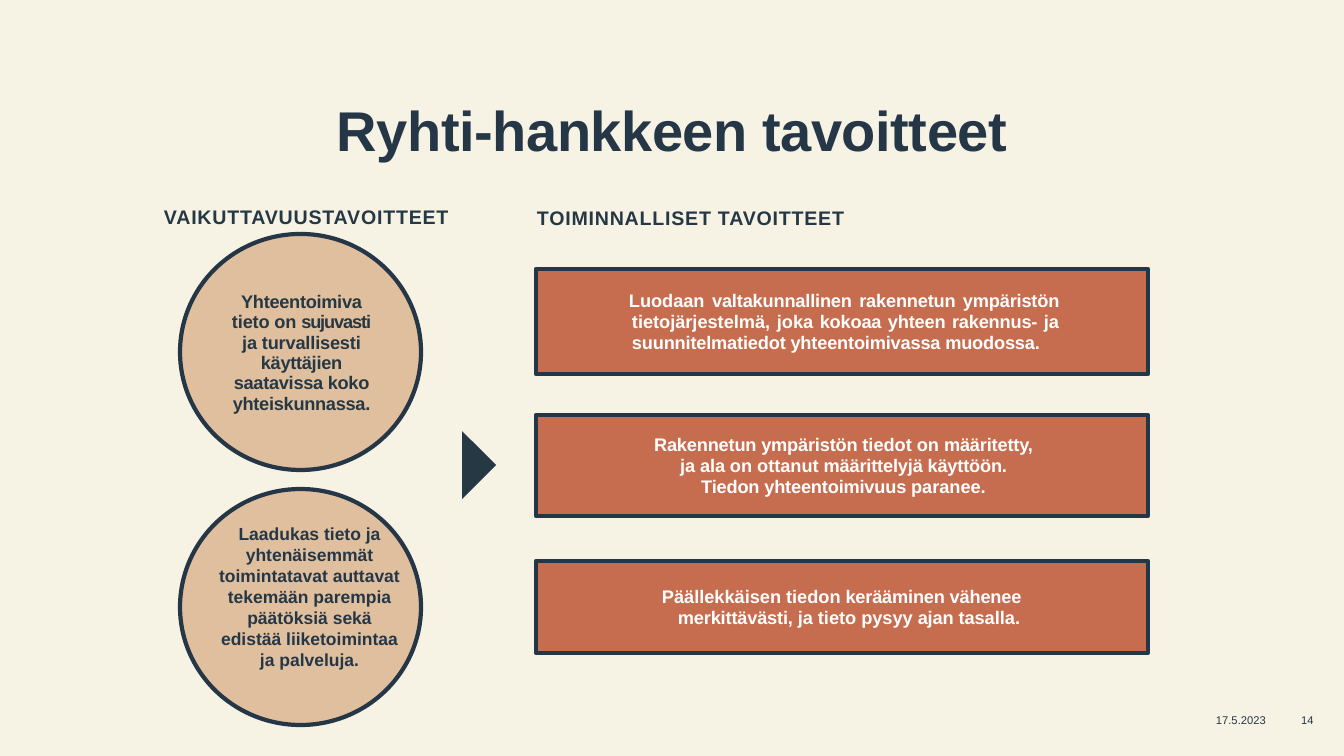
import pptx
import pptx.dml.color
import pptx.enum.shapes
import pptx.enum.text
import pptx.util

RGBColor = pptx.dml.color.RGBColor
ALIGN = pptx.enum.text.PP_ALIGN
ANCHOR = pptx.enum.text.MSO_ANCHOR
SHAPE = pptx.enum.shapes.MSO_SHAPE

CREAM = RGBColor(0xF6, 0xF3, 0xE5)
NAVY = RGBColor(0x25, 0x37, 0x46)
SLATE = RGBColor(0x26, 0x38, 0x44)
SAND = RGBColor(0xE0, 0xBF, 0x9E)
TERRACOTTA = RGBColor(0xC6, 0x6D, 0x4F)
WHITE = RGBColor(0xFF, 0xFF, 0xFF)

SLIDE_WIDTH, SLIDE_HEIGHT = 1344, 756
EMU_PER_PX = 12192000 / SLIDE_WIDTH

# Circles and boxes each stand at an even step
CIRCLE_LEFT, CIRCLE_TOP, CIRCLE_STEP = 180, 234, 255
CIRCLE_WIDTH, CIRCLE_HEIGHT = 241, 236
BOX_LEFT, BOX_TOP, BOX_STEP, BOX_WIDTH = 536, 269, 146, 612

# Each box: height, alignment, (left, first line, right) indents, paragraphs of (text, letter spacing) runs
GOALS = [
    (105, ALIGN.JUSTIFY, (96, -3, 89), [[
        ("Luodaan ", 0),
        ("valtakunnallinen rakennetun ympäristön ", -0.1),
        ("tietojärjestelmä, joka ", 0),
        ("kokoaa yhteen rakennus- ", -0.1),
        ("ja ", 0),
        ("suunnitelmatiedot yhteentoimivassa muodossa.", -0.1)]]),
    (101, ALIGN.CENTER, (3, 0, 0), [
        [("Rakennetun ympäristön ", -0.1), ("tiedot on ", 0),
         ("määritetty,\n", -0.1), ("ja ", 0), ("ala ", -0.1),
         ("on ottanut ", 0), ("määrittelyjä käyttöön.", -0.1)],
        [("Tiedon yhteentoimivuus ", -0.1), ("paranee.", 0)]]),
    (92, ALIGN.LEFT, (142, -16, 0), [[
        ("Päällekkäisen tiedon ", 0), ("kerääminen vähenee\nmerkittävästi, ", -0.1),
        ("ja tieto pysyy ", 0), ("ajan ", -0.1), ("tasalla.", 0)]]),
]
FLUENT_DATA = [
    ("Yhteentoimiva\n", -0.2), ("tieto on ", -0.1), ("sujuvasti\n", -0.8),
    ("ja turvallisesti\n", -0.1),
    ("käyttäjien\nsaatavissa koko\nyhteiskunnassa.", -0.2)]
QUALITY_DATA = [(
    "Laadukas tieto ja\nyhtenäisemmät\ntoimintatavat auttavat\n"
    "tekemään parempia\npäätöksiä sekä\nedistää liiketoimintaa\nja palveluja.", 0)]


def px(length):
    return pptx.util.Emu(round(length * EMU_PER_PX))


def add_runs(paragraph, runs):
    for text, spacing in runs:
        for number, line in enumerate(text.split("\n")):
            if number:
                paragraph.add_line_break()
            if line:
                run = paragraph.add_run()
                run.text = line
                if spacing:
                    run.font._element.set("spc", str(round(spacing * 100)))


def write_text(shape, paragraphs, size, color, align=ALIGN.CENTER, anchor=ANCHOR.TOP,
               bold=True, line_spacing=None, indents=(0, 0, 0), inset_top=0, inset_bottom=0):
    frame = shape.text_frame
    frame.word_wrap = True
    frame.vertical_anchor = anchor
    frame.margin_left = frame.margin_right = 0
    frame.margin_top, frame.margin_bottom = px(inset_top), px(inset_bottom)
    for number, runs in enumerate(paragraphs):
        paragraph = frame.add_paragraph() if number else frame.paragraphs[0]
        paragraph.alignment = align
        if line_spacing:
            paragraph.line_spacing = line_spacing
        properties = paragraph._p.get_or_add_pPr()
        for name, indent in zip(("marL", "indent", "marR"), indents):
            properties.set(name, str(px(indent)))
        add_runs(paragraph, runs)
        font = paragraph.font
        font.name, font.size, font.bold = "Arial", pptx.util.Pt(size), bold
        font.color.rgb = color


def add_text(slide, left, top, width, height, runs, size, color, **options):
    box = slide.shapes.add_textbox(px(left), px(top), px(width), px(height))
    write_text(box, [runs], size, color, **options)


def add_outlined(slide, kind, left, top, width, height, fill):
    shape = slide.shapes.add_shape(kind, px(left), px(top), px(width), px(height))
    shape.shadow.inherit = False
    shape.fill.solid()
    shape.fill.fore_color.rgb = fill
    shape.line.color.rgb = NAVY
    shape.line.width = pptx.util.Pt(3)
    return shape


def add_pointer(slide, left, top, width, height):
    builder = slide.shapes.build_freeform(left, top, scale=EMU_PER_PX)
    builder.add_line_segments(
        [(left, top + height), (left + width, top + height / 2)], close=True)
    pointer = builder.convert_to_shape()
    pointer.shadow.inherit = False
    pointer.fill.solid()
    pointer.fill.fore_color.rgb = SLATE
    pointer.line.fill.background()


def main():
    presentation = pptx.Presentation()
    presentation.slide_width, presentation.slide_height = px(SLIDE_WIDTH), px(SLIDE_HEIGHT)
    slide = presentation.slides.add_slide(presentation.slide_layouts[6])
    slide.background.fill.solid()
    slide.background.fill.fore_color.rgb = CREAM

    # Circles
    for number in range(2):
        add_outlined(slide, SHAPE.OVAL, CIRCLE_LEFT, CIRCLE_TOP + number * CIRCLE_STEP,
                     CIRCLE_WIDTH, CIRCLE_HEIGHT, SAND)

    # Title and footer
    add_text(slide, 110, 94, 1124, 132, [("Ryhti-hankkeen tavoitteet", -0.3)], 40, NAVY,
             anchor=ANCHOR.BOTTOM, line_spacing=0.9, inset_bottom=64)
    for left, width, text in ((1200, 82, "17.5.2023"), (1284, 47, "14")):
        add_text(slide, left, 709, width, 22, [(text, 0)], 8, NAVY,
                 anchor=ANCHOR.MIDDLE, bold=False)

    # Column headings
    for left, top, width, text in ((163, 204, 292, "VAIKUTTAVUUSTAVOITTEET"),
                                   (536, 205, 347, "TOIMINNALLISET TAVOITTEET")):
        add_text(slide, left, top, width, 25, [(text, 0.55)], 14, SLATE,
                 align=ALIGN.LEFT, indents=(1, 0, 0), inset_top=1)

    # Goal boxes
    for number, (height, align, indents, paragraphs) in enumerate(GOALS):
        box = add_outlined(slide, SHAPE.RECTANGLE, BOX_LEFT, BOX_TOP + number * BOX_STEP,
                           BOX_WIDTH, height, TERRACOTTA)
        write_text(box, paragraphs, 13, WHITE, align=align, anchor=ANCHOR.MIDDLE,
                   line_spacing=pptx.util.Pt(15), indents=indents)

    # Pointer between the columns
    add_pointer(slide, 462, 431, 34, 68)

    # Circle texts
    add_text(slide, 226, 289, 151, 122, FLUENT_DATA, 13, SLATE,
             line_spacing=pptx.util.Pt(14.5), inset_top=3)
    add_text(slide, 217, 523, 185, 148, QUALITY_DATA, 12.5, NAVY,
             line_spacing=pptx.util.Pt(15))

    presentation.save("out.pptx")


if __name__ == "__main__":
    main()
